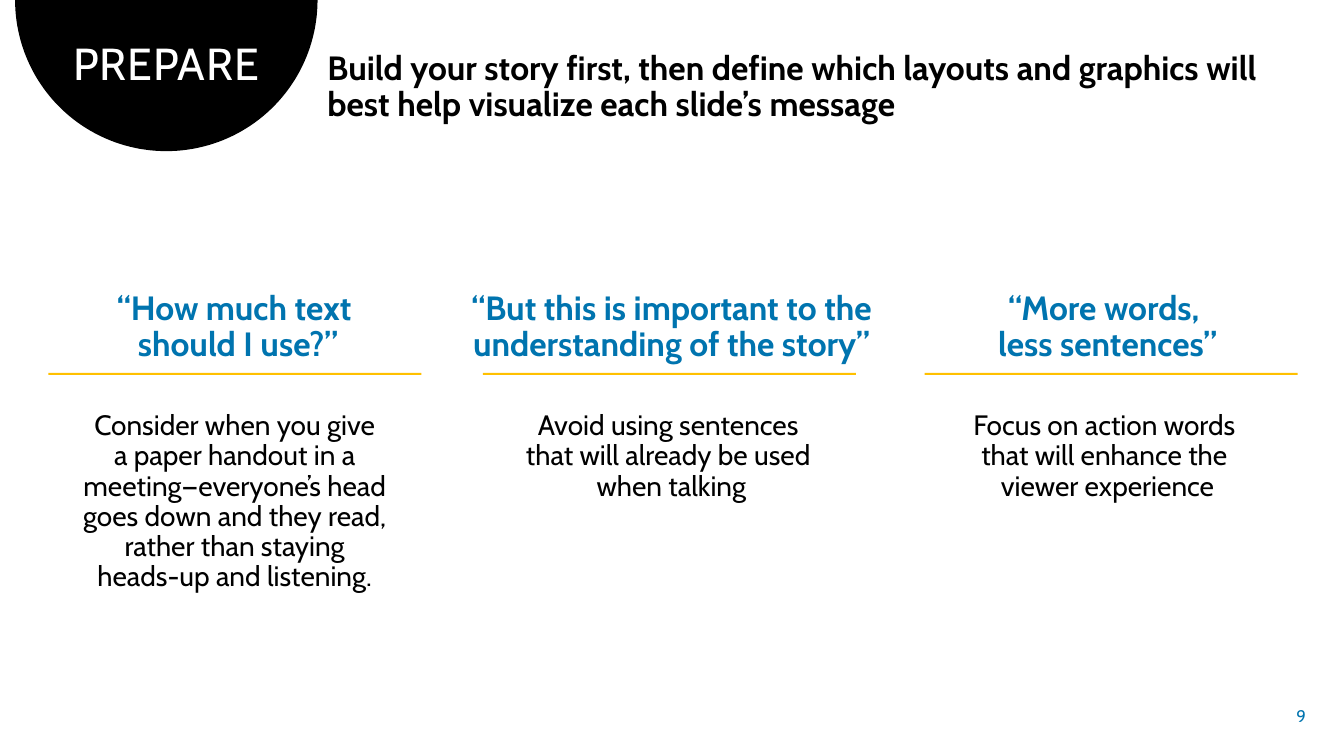
from math import cos, pi, sin

from pptx import Presentation
from pptx.dml.color import RGBColor
from pptx.enum.shapes import MSO_SHAPE
from pptx.enum.text import MSO_ANCHOR, PP_ALIGN
from pptx.util import Emu, Pt

EMU_PER_PX = 9144  # 100 px to the inch
FONT = "Cabin"
BLACK, WHITE, BLUE, GOLD = "000000", "FFFFFF", "0074AF", "FFC000"

COLUMN_TOP = 284
RULE_TOP, RULE_WIDTH, RULE_HEIGHT = 370, 370, 2

# Box left, width and height, rule left, heading lines, body lines
COLUMNS = [
    (33, 406, 321, 48,
     ["“How much text ", "should I use?”"],
     ["Consider when you give ", "a paper handout in a ",
      "meeting—everyone’s head ", "goes down and they read, ",
      "rather than staying ", "heads-up and listening. "]),
    (456, 420, 221, 479,
     ["“But this is important to the understanding of the story”"],
     ["Avoid using sentences ", "that will already be used ", "when talking"]),
    (892, 413, 221, 917,
     ["“More words, ", "less sentences”"],
     ["Focus on action words ", "that will enhance the ", "viewer experience"]),
]


def px(length):
    return Emu(round(length * EMU_PER_PX))


def color(value):
    return RGBColor.from_string(value)


def paint(shape, fill):
    shape.shadow.inherit = False
    shape.fill.solid()
    shape.fill.fore_color.rgb = color(fill)
    shape.line.fill.background()


def add_box(page, left, top, width, height, anchor=MSO_ANCHOR.TOP):
    box = page.shapes.add_textbox(px(left), px(top), px(width), px(height))
    frame = box.text_frame
    frame.word_wrap = True
    frame.vertical_anchor = anchor
    return frame


def write(para, lines, size, ink, bold=False, align=PP_ALIGN.CENTER,
          before=0, after=0, tracking=0):
    para.alignment = align
    para.line_spacing = 0.9
    para.space_before, para.space_after = Pt(before), Pt(after)
    for index, line in enumerate(lines):
        if index:
            para.add_line_break()
        span = para.add_run()
        span.text = line
        font = span.font
        font.name, font.size, font.bold = FONT, Pt(size), bold
        font.color.rgb = color(ink)
        if tracking:
            font._element.set("spc", str(tracking))


def add_half_disc(page, center, radius, fill, steps=90):
    points = [(px(center + radius * cos(pi * step / steps)),
               px(radius * sin(pi * step / steps)))
              for step in range(steps + 1)]
    builder = page.shapes.build_freeform(*points[0])
    builder.add_line_segments(points[1:], close=True)
    paint(builder.convert_to_shape(), fill)


def add_column(page, left, width, height, rule_left, heading, body):
    frame = add_box(page, left, COLUMN_TOP, width, height)
    write(frame.paragraphs[0], heading, 24, BLUE, bold=True, before=10, after=24)
    write(frame.add_paragraph(), body, 20, BLACK, before=10, after=12)
    rule = page.shapes.add_shape(MSO_SHAPE.RECTANGLE, px(rule_left), px(RULE_TOP),
                                 px(RULE_WIDTH), px(RULE_HEIGHT))
    paint(rule, GOLD)


def main():
    deck = Presentation()
    deck.slide_width, deck.slide_height = px(1333), px(750)
    page = deck.slides.add_slide(deck.slide_layouts[6])

    # Section badge
    add_half_disc(page, 165, 150, BLACK)
    badge = add_box(page, 35, 37, 260, 59)
    write(badge.paragraphs[0], ["PREPARE"], 32, WHITE, tracking=60)

    # Headline
    headline = add_box(page, 315, 46, 993, 83)
    write(headline.paragraphs[0],
          ["Build your story first, then define which layouts and graphics will "
           "best help visualize each slide’s message"],
          24, BLACK, bold=True, align=PP_ALIGN.LEFT, before=10)

    # Three columns of advice
    for column in COLUMNS:
        add_column(page, *column)

    # Page number
    number = add_box(page, 1250, 691, 55, 40, MSO_ANCHOR.MIDDLE)
    write(number.paragraphs[0], ["9"], 12, BLUE, align=PP_ALIGN.RIGHT)

    deck.save("out.pptx")


if __name__ == "__main__":
    main()
